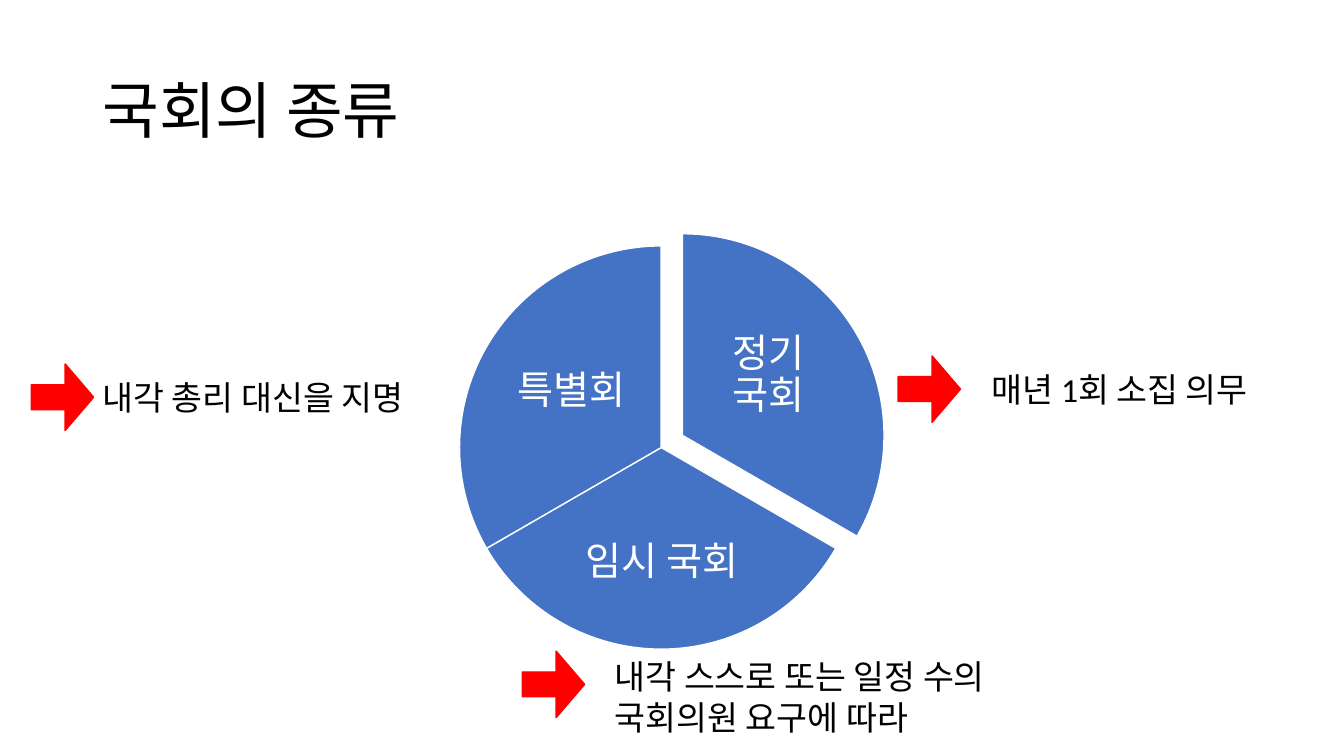
"""Build the slide on the kinds of National Assembly sessions."""
from dataclasses import dataclass

from pptx import Presentation
from pptx.dml.color import RGBColor
from pptx.enum.shapes import MSO_SHAPE as Shape
from pptx.enum.text import MSO_ANCHOR as Anchor, MSO_AUTO_SIZE as AutoSize, PP_ALIGN as Align
from pptx.util import Pt


@dataclass(frozen=True)
class Theme:
    font: str = "Calibri"
    black: RGBColor = RGBColor(0, 0, 0)
    white: RGBColor = RGBColor(255, 255, 255)
    blue: RGBColor = RGBColor(0x44, 0x72, 0xC4)
    red: RGBColor = RGBColor(255, 0, 0)
    title_size: int = 44
    label_size: int = 28
    note_size: int = 24


theme = Theme()


def write(shape, text, size, color, align=Align.LEFT, spacing=1.0):
    frame = shape.text_frame
    frame.word_wrap = True
    paragraph = frame.paragraphs[0]
    paragraph.alignment = align
    paragraph.line_spacing = spacing
    run = paragraph.add_run()
    run.text = text
    run.font.name = theme.font
    run.font.size = Pt(size)
    run.font.color.rgb = color


def paint(shape, fill, line):
    shape.shadow.inherit = False
    shape.fill.solid()
    shape.fill.fore_color.rgb = fill
    shape.line.color.rgb = line
    shape.line.width = Pt(1)


presentation = Presentation()
presentation.slide_width = Pt(960)
presentation.slide_height = Pt(540)
slide = presentation.slides.add_slide(presentation.slide_layouts[5])

title = slide.shapes.title
title.left, title.top, title.width, title.height = Pt(66), Pt(29), Pt(828), Pt(104)
title.text_frame.vertical_anchor = Anchor.MIDDLE
write(title, "국회의 종류", theme.title_size, theme.black, spacing=0.9)

DIAMETER = 288
FULL_TURN = 216
THIRD = FULL_TURN / 3
TOP_ANGLE = 162
sessions = [
    ("정기 국회", (343.5, 167), (499.7, 220.3, 98, 95.8)),
    ("임시 국회", (328.3, 175.7), (407.5, 357.1, 130.3, 89.3)),
    ("특별회", (328.3, 175.7), (359.3, 231.8, 98, 95.8)),
]
pie = slide.shapes.add_group_shape()
for index, (name, (left, top), label_box) in enumerate(sessions):
    wedge = pie.shapes.add_shape(Shape.PIE, Pt(left), Pt(top), Pt(DIAMETER), Pt(DIAMETER))
    wedge.adjustments[0] = (TOP_ANGLE + index * THIRD) % FULL_TURN
    wedge.adjustments[1] = (TOP_ANGLE + (index + 1) * THIRD) % FULL_TURN
    paint(wedge, theme.blue, theme.white)

    label = pie.shapes.add_textbox(*map(Pt, label_box))
    frame = label.text_frame
    frame.vertical_anchor = Anchor.MIDDLE
    frame.margin_left = frame.margin_right = frame.margin_top = frame.margin_bottom = Pt(2.8)
    write(label, name, theme.label_size, theme.white, Align.CENTER, 0.9)

notes = [
    ("매년 1회 소집 의무", (641.5, 254.2), (701.3, 260, 305.3, 36)),
    ("내각 총리 대신을 지명", (22.3, 260), (66.2, 265.7, 274.3, 36)),
    ("내각 스스로 또는 일정 수의 국회의원 요구에 따라", (373, 465.1), (432, 465.1, 305.3, 65.5)),
]
for text, (left, top), note_box in notes:
    arrow = slide.shapes.add_shape(Shape.RIGHT_ARROW, Pt(left), Pt(top), Pt(44.6), Pt(47.5))
    arrow.adjustments[0] = 0.373
    arrow.adjustments[1] = 0.456
    paint(arrow, theme.red, theme.red)

    note = slide.shapes.add_textbox(*map(Pt, note_box))
    note.text_frame.auto_size = AutoSize.SHAPE_TO_FIT_TEXT
    write(note, text, theme.note_size, theme.black)

presentation.save("out.pptx")
